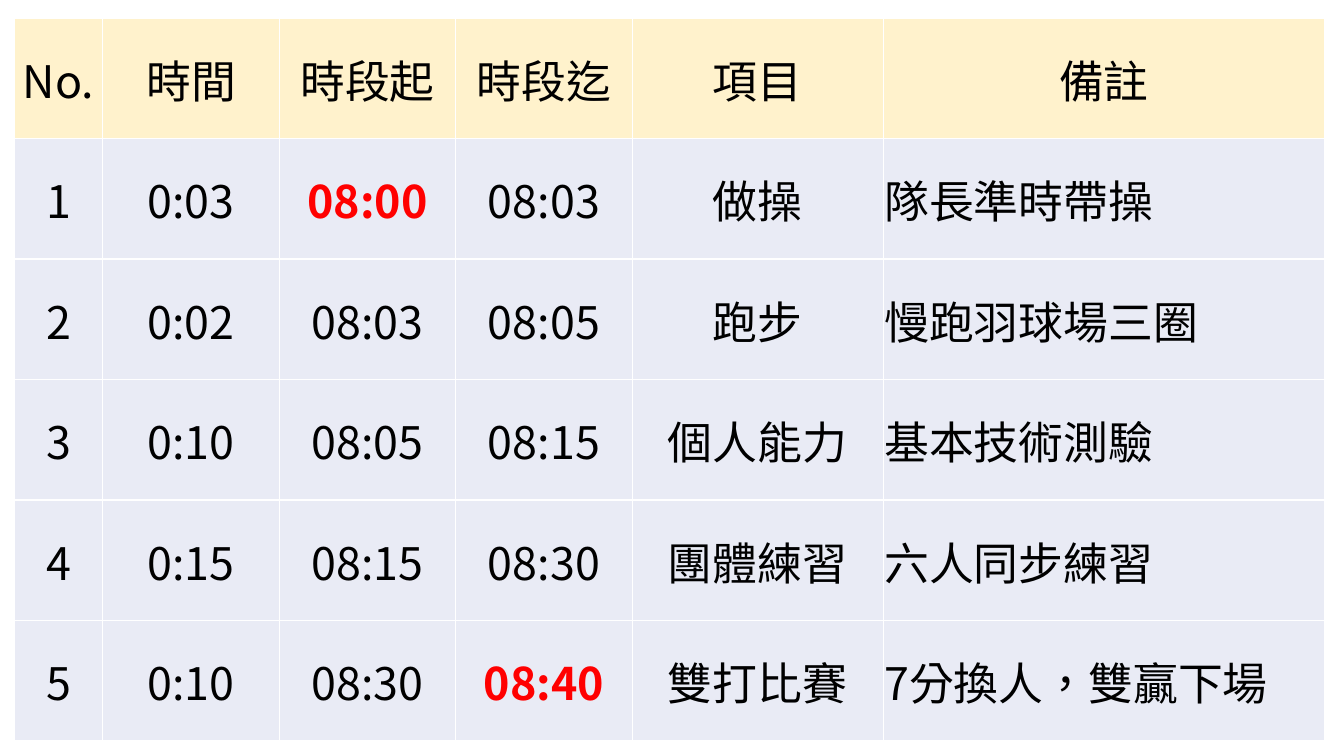
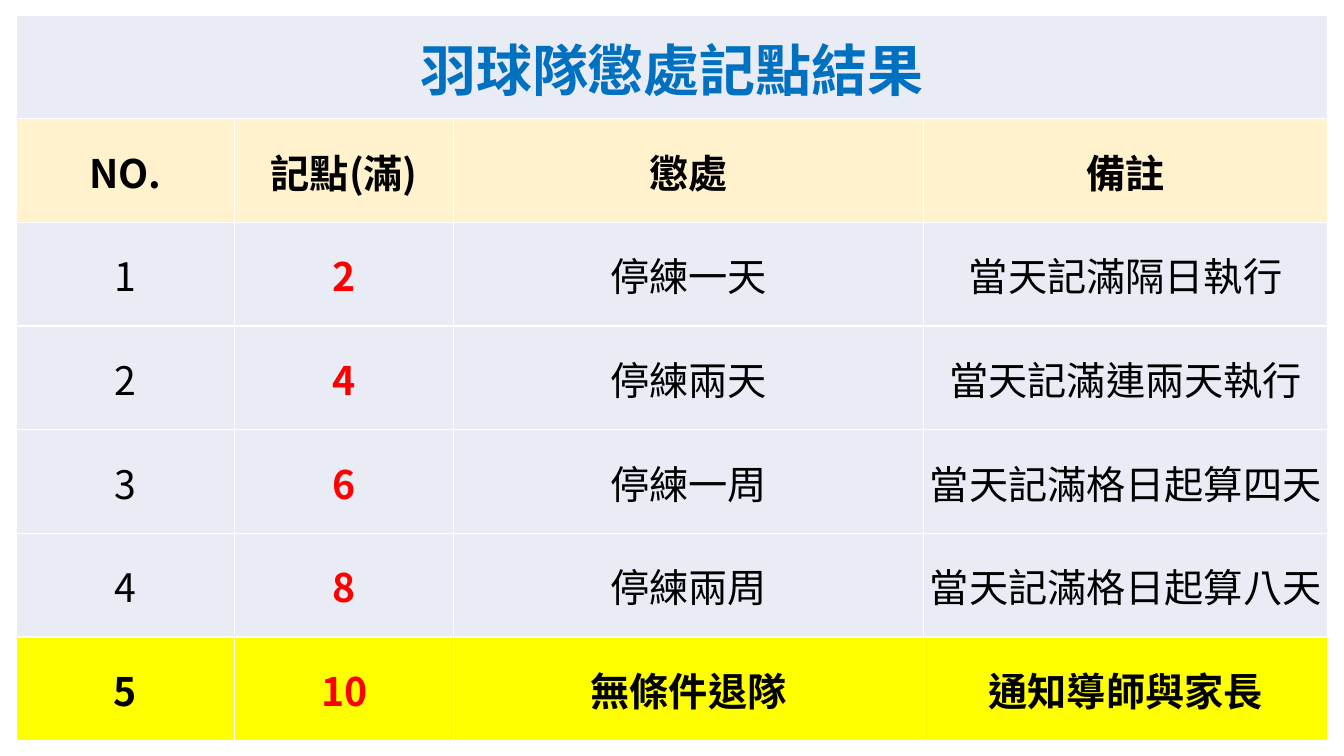
from lxml import etree
from pptx import Presentation
from pptx.dml.color import RGBColor
from pptx.enum.text import MSO_ANCHOR, PP_ALIGN
from pptx.oxml.ns import qn
from pptx.util import Inches, Pt

CENTER, LEFT, MIDDLE = PP_ALIGN.CENTER, PP_ALIGN.LEFT, MSO_ANCHOR.MIDDLE
FONT = "Noto Sans CJK SC"
COLORS = {
    "text": "000000", "alert": "FF0000", "title": "0070C0", "border": "FFFFFF",
    "header": "FFF2CC", "body": "E9EBF5", "final": "FFFF00",
}

SCHEDULE = [
    ("No.", "時間", "時段起", "時段迄", "項目", "備註"),
    ("1", "0:03", "08:00", "08:03", "做操", "隊長準時帶操"),
    ("2", "0:02", "08:03", "08:05", "跑步", "慢跑羽球場三圈"),
    ("3", "0:10", "08:05", "08:15", "個人能力", "基本技術測驗"),
    ("4", "0:15", "08:15", "08:30", "團體練習", "六人同步練習"),
    ("5", "0:10", "08:30", "08:40", "雙打比賽", "7分換人，雙贏下場"),
]
SCHEDULE_COLUMNS = (0.88, 1.75, 1.75, 1.75, 2.49, 4.38)
SESSION_LIMITS = ("08:00", "08:40")

PENALTIES = [
    ("羽球隊懲處記點結果", "", "", ""),
    ("NO.", "記點(滿)", "懲處", "備註"),
    ("1", "2", "停練一天", "當天記滿隔日執行"),
    ("2", "4", "停練兩天", "當天記滿連兩天執行"),
    ("3", "6", "停練一周", "當天記滿格日起算四天"),
    ("4", "8", "停練兩周", "當天記滿格日起算八天"),
    ("5", "10", "無條件退隊", "通知導師與家長"),
]
PENALTY_COLUMNS = (2.17, 2.17, 4.66, 4.01)


def schedule_style(row, column, text):
    if row == 0:
        return {"size": 32, "fill": "header"}
    limit = text in SESSION_LIMITS
    return {
        "size": 32,
        "bold": limit,
        "color": "alert" if limit else "text",
        "align": LEFT if column == len(SCHEDULE_COLUMNS) - 1 else CENTER,
    }


def penalty_style(row, column, text):
    if row == 0:
        return {"size": 40, "bold": True, "color": "title"}
    if row == 1:
        return {"size": 28, "bold": True, "fill": "header"}
    final, points = row == len(PENALTIES) - 1, column == 1
    return {
        "size": 28,
        "bold": final or points,
        "color": "alert" if points else "text",
        "fill": "final" if final else "body",
    }


def rgb(name):
    return RGBColor.from_string(COLORS[name])


def add_borders(cell):
    properties = cell._tc.get_or_add_tcPr()
    for side in ("a:lnL", "a:lnR", "a:lnT", "a:lnB"):
        line = etree.SubElement(properties, qn(side), w=str(Pt(1)))
        solid = etree.SubElement(line, qn("a:solidFill"))
        etree.SubElement(solid, qn("a:srgbClr"), val=COLORS["border"])


def write_cell(cell, text, size, bold=False, color="text", fill="body", align=CENTER):
    cell.margin_left = cell.margin_right = cell.margin_top = Inches(0.01)
    cell.margin_bottom = 0
    cell.vertical_anchor = MIDDLE
    add_borders(cell)
    cell.fill.solid()
    cell.fill.fore_color.rgb = rgb(fill)
    if not text:
        return
    paragraph = cell.text_frame.paragraphs[0]
    paragraph.alignment = align
    run = paragraph.add_run()
    run.text = text
    run.font.size, run.font.bold = Pt(size), bold
    run.font.color.rgb = rgb(color)
    run.font.name = FONT
    properties = run.font._element
    properties.set("lang", "zh-TW")
    etree.SubElement(properties, qn("a:ea"), typeface=FONT)


def add_table_slide(deck, rows, columns, left, top, height, style):
    slide = deck.slides.add_slide(deck.slide_layouts[6])
    table = slide.shapes.add_table(
        len(rows), len(columns), Inches(left), Inches(top),
        Inches(sum(columns)), Inches(height),
    ).table
    table.first_row = table.horz_banding = False
    for column, width in zip(table.columns, columns):
        column.width = Inches(width)
    for r, values in enumerate(rows):
        for c, text in enumerate(values):
            write_cell(table.cell(r, c), text, **style(r, c, text))
    return table


def main():
    deck = Presentation()
    deck.slide_width, deck.slide_height = Inches(13.33), Inches(7.5)
    add_table_slide(deck, SCHEDULE, SCHEDULE_COLUMNS, 0.14, 0.18, 7.17, schedule_style)
    penalties = add_table_slide(
        deck, PENALTIES, PENALTY_COLUMNS, 0.16, 0.15, 7.2, penalty_style)
    penalties.cell(0, 0).merge(penalties.cell(0, len(PENALTY_COLUMNS) - 1))
    deck.save("out.pptx")


if __name__ == "__main__":
    main()
